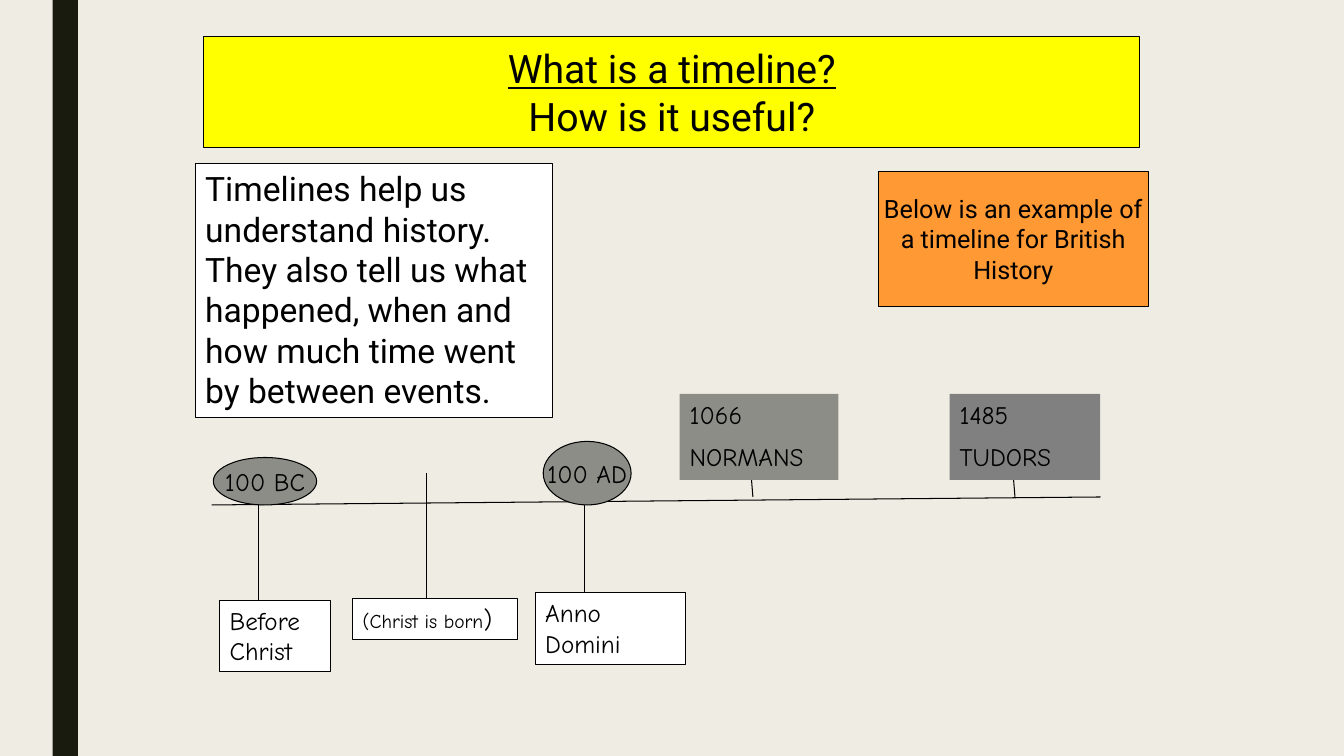
"""Build a slide that explains timelines with a short British example."""
from dataclasses import dataclass
from typing import Optional

from lxml.etree import SubElement
from pptx import Presentation
from pptx.dml.color import RGBColor
from pptx.enum.shapes import MSO_CONNECTOR, MSO_SHAPE
from pptx.enum.text import MSO_ANCHOR, MSO_AUTO_SIZE, PP_ALIGN
from pptx.oxml.ns import qn
from pptx.shapes.autoshape import Shape
from pptx.slide import Slide
from pptx.util import Pt

BLACK = RGBColor(0x00, 0x00, 0x00)
WHITE = RGBColor(0xFF, 0xFF, 0xFF)
CREAM = RGBColor(0xEF, 0xED, 0xE3)
DARK = RGBColor(0x19, 0x1B, 0x0E)
YELLOW = RGBColor(0xFF, 0xFF, 0x00)
ORANGE = RGBColor(0xFF, 0x99, 0x33)
STONE = RGBColor(0x8C, 0x8D, 0x86)
GREY = RGBColor(0x80, 0x80, 0x80)

PLAIN = "Roboto"
COMIC = "Comic Neue"
RULE = 0.75
DROP = 90.7

FRAME = {"auto_size": MSO_AUTO_SIZE.NONE, "margin_left": Pt(7.2), "margin_right": Pt(7.2),
         "margin_top": Pt(3.6), "margin_bottom": Pt(3.6)}
LEFT = {"word_wrap": True, "vertical_anchor": MSO_ANCHOR.TOP}
MID = {"word_wrap": False, "vertical_anchor": MSO_ANCHOR.MIDDLE}


@dataclass(frozen=True)
class Bit:
    """A run of text with its size."""
    text: str
    size: float = 18
    under: bool = False


@dataclass(frozen=True)
class Box:
    """A filled shape with its text, one tuple of bits a paragraph."""
    left: float
    top: float
    width: float
    height: float
    fill: RGBColor
    paras: tuple[tuple[Bit, ...], ...] = ()
    font: str = COMIC
    edge: Optional[RGBColor] = BLACK
    mid: bool = False
    gap: float = 0
    kind: MSO_SHAPE = MSO_SHAPE.RECTANGLE


@dataclass(frozen=True)
class Line:
    """A thin line between two points."""
    x1: float
    y1: float
    x2: float
    y2: float


BAR = Box(37.6, 0, 18, 540, DARK, edge=None)
TITLE = Box(145.3, 26, 669, 79.2, YELLOW,
            ((Bit("What is a timeline?", 28, True),), (Bit("How is it useful?", 28),)),
            PLAIN, mid=True)
NOTES = (
    Box(139.5, 116.6, 255.5, 181.6, WHITE,
        ((Bit("Timelines help us understand history. They also tell us what happened, "
              "when and how much time went by between events.", 24),),), PLAIN),
    Box(627.3, 122.4, 193, 96.4, ORANGE,
        ((Bit("Below is an example of"),), (Bit("a timeline for British"),), (Bit("History"),)),
        PLAIN, mid=True),
)
DROPS = ((185, 343.4), (304.5, 337.7), (417.6, 332.6))
LINES = (
    Line(151.2, 360.7, 786.2, 355),
    *(Line(x, y, x, y + DROP) for x, y in DROPS),
    Line(536.4, 337.7, 537.8, 355),
    Line(725, 355, 723.6, 337.7),
)
EVENTS = (
    Box(252, 427.7, 117.6, 29, WHITE, ((Bit("(Christ is born", 14), Bit(")")),)),
    Box(157, 428.6, 79.2, 51, WHITE, ((Bit("Before Christ"),),)),
    Box(382.4, 423.4, 107.5, 51, WHITE, ((Bit("Anno Domini"),),)),
    Box(485.5, 281.4, 113.5, 61.4, STONE, ((Bit("1066"),), (Bit("NORMANS"),)), edge=None, gap=9),
    Box(678.4, 281.4, 107.5, 61.4, GREY, ((Bit("1485"),), (Bit("TUDORS"),)), edge=None, gap=9),
    Box(388, 315.3, 62.8, 45.4, STONE, ((Bit("100 AD"),),), mid=True, kind=MSO_SHAPE.OVAL),
    Box(152.4, 326.8, 73.8, 33.9, STONE, ((Bit("100 BC"),),), mid=True, kind=MSO_SHAPE.OVAL),
)


def apply(item: object, form: dict) -> None:
    """Set each format value on the item."""
    for name, value in form.items():
        setattr(item, name, value)


def write(shape: Shape, box: Box) -> None:
    """Write the paragraphs of a box into its shape."""
    frame = shape.text_frame
    apply(frame, FRAME | (MID if box.mid else LEFT))
    for pos, bits in enumerate(box.paras):
        para = frame.add_paragraph() if pos else frame.paragraphs[0]
        apply(para, {"alignment": PP_ALIGN.CENTER if box.mid else PP_ALIGN.LEFT,
                     "space_before": Pt(box.gap if pos else 0)})
        for bit in bits:
            run = para.add_run()
            run.text = bit.text
            apply(run.font, {"name": box.font, "size": Pt(bit.size), "underline": bit.under})
            run.font.color.rgb = BLACK


def dress(shape: Shape, box: Box) -> None:
    """Place, fill, edge and label a shape."""
    apply(shape, {"left": Pt(box.left), "top": Pt(box.top),
                  "width": Pt(box.width), "height": Pt(box.height)})
    shape.fill.solid()
    shape.fill.fore_color.rgb = box.fill
    if box.edge is None:
        shape.line.fill.background()
    else:
        shape.line.color.rgb = box.edge
        shape.line.width = Pt(RULE)
    shape.shadow.inherit = False
    write(shape, box)


def draw(slide: Slide, box: Box) -> None:
    """Add a box to the slide."""
    dress(slide.shapes.add_shape(box.kind, Pt(box.left), Pt(box.top),
                                 Pt(box.width), Pt(box.height)), box)


def link(slide: Slide, line: Line) -> None:
    """Add a plain black line to the slide."""
    rule = slide.shapes.add_connector(MSO_CONNECTOR.STRAIGHT, Pt(line.x1), Pt(line.y1),
                                      Pt(line.x2), Pt(line.y2))
    rule.line.color.rgb = BLACK
    rule.line.width = Pt(RULE)
    SubElement(rule._element.spPr, qn("a:effectLst"))


def main() -> None:
    """Build and save the slide."""
    deck = Presentation()
    apply(deck, {"slide_width": Pt(960), "slide_height": Pt(540)})
    slide = deck.slides.add_slide(deck.slide_layouts[5])
    back = slide.background.fill
    back.solid()
    back.fore_color.rgb = CREAM
    dress(slide.shapes.title, TITLE)
    for box in (BAR, *NOTES):
        draw(slide, box)
    for line in LINES:
        link(slide, line)
    for box in EVENTS:
        draw(slide, box)
    deck.save("out.pptx")


if __name__ == "__main__":
    main()
